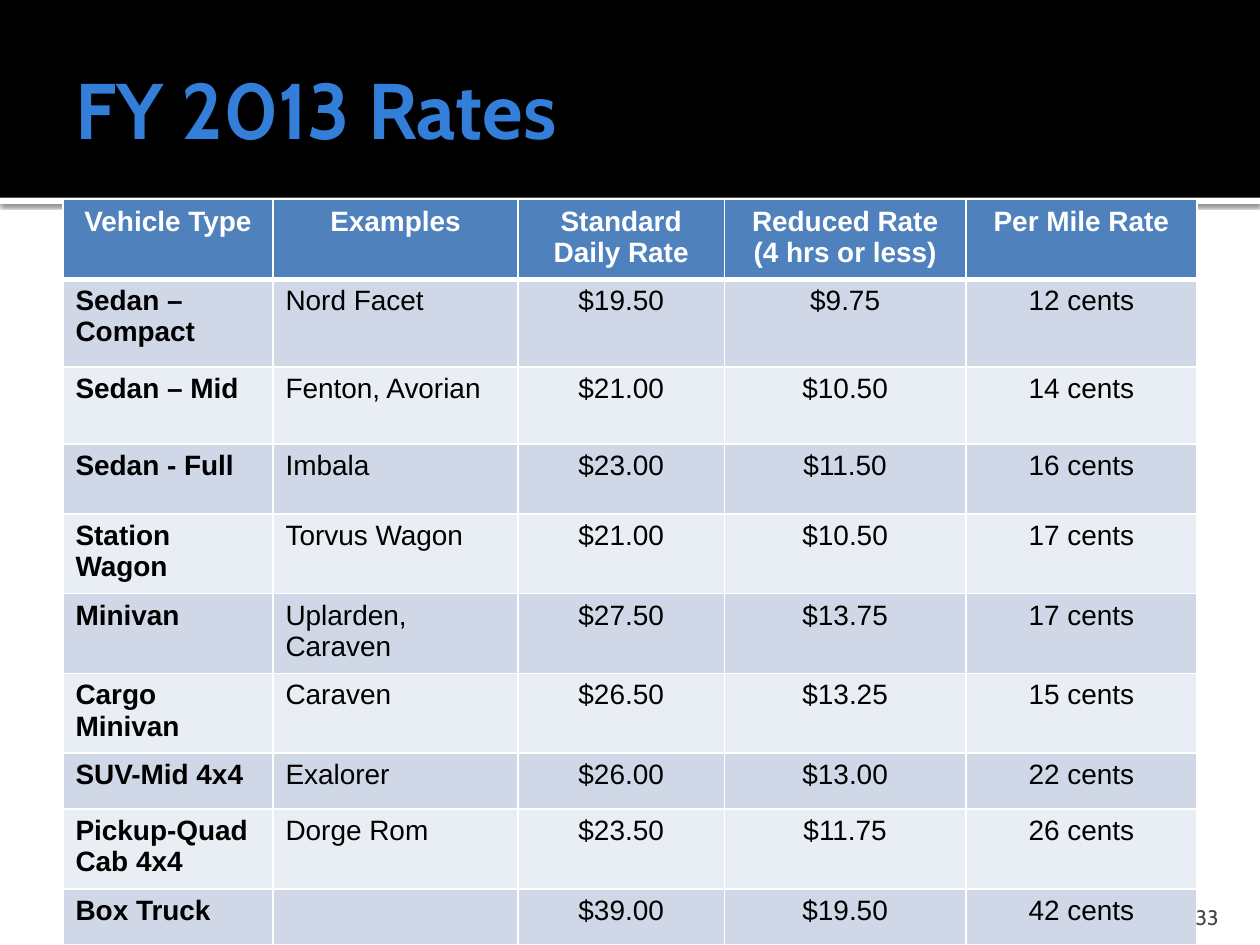
from lxml.etree import SubElement
from pptx import Presentation
from pptx.dml.color import RGBColor
from pptx.enum.shapes import MSO_SHAPE
from pptx.enum.text import MSO_ANCHOR, PP_ALIGN
from pptx.oxml.ns import qn
from pptx.util import Pt

COLUMN_WIDTHS = [120, 140, 118, 138, 132]
ROW_HEIGHTS = [45, 50, 44, 40, 42, 42, 40, 32, 45, 32]
RATES = [
    ["Vehicle Type", "Examples", "Standard\nDaily Rate",
     "Reduced Rate\n(4 hrs or less)", "Per Mile Rate"],
    ["Sedan – Compact", "Nord Facet", "$19.50", "$9.75", "12 cents"],
    ["Sedan – Mid", "Fenton, Avorian", "$21.00", "$10.50", "14 cents"],
    ["Sedan - Full", "Imbala", "$23.00", "$11.50", "16 cents"],
    ["Station Wagon", "Torvus Wagon", "$21.00", "$10.50", "17 cents"],
    ["Minivan", "Uplarden, Caraven", "$27.50", "$13.75", "17 cents"],
    ["Cargo Minivan", "Caraven", "$26.50", "$13.25", "15 cents"],
    ["SUV-Mid 4x4", "Exalorer", "$26.00", "$13.00", "22 cents"],
    ["Pickup-Quad Cab 4x4", "Dorge Rom", "$23.50", "$11.75", "26 cents"],
    ["Box Truck", "", "$39.00", "$19.50", "42 cents"],
]


def color(value):
    return RGBColor.from_string(value)


class RateSlide:
    heading_font = "Cabin"
    table_font = "Arial"
    header_fill = "4F81BD"
    row_fills = ["E9EDF4", "D0D8E8"]
    rule = "FFFFFF"

    def __init__(self, slide):
        self.slide = slide

    def band(self, top, height, fill):
        band = self.slide.shapes.add_shape(
            MSO_SHAPE.RECTANGLE, 0, Pt(top), Pt(720), Pt(height))
        band.shadow.inherit = False
        band.fill.solid()
        band.fill.fore_color.rgb = color(fill)
        band.line.fill.background()
        return band

    def cast_shadow(self, band):
        effects = band._element.spPr.find(qn("a:effectLst"))
        shadow = SubElement(
            effects, qn("a:outerShdw"), blurRad=str(Pt(2.5)),
            dist=str(Pt(0.8)), dir="5400000", rotWithShape="0")
        shade = SubElement(shadow, qn("a:srgbClr"), val="000000")
        SubElement(shade, qn("a:alpha"), val="60000")

    def style_runs(self, frame, font, size, ink, bold, align):
        for paragraph in frame.paragraphs:
            paragraph.alignment = align
            for run in paragraph.runs:
                run.font.name = font
                run.font.size = Pt(size)
                run.font.bold = bold
                run.font.color.rgb = color(ink)

    def text(self, words, box, size, ink, anchor, margins,
             bold=False, align=PP_ALIGN.LEFT):
        frame = self.slide.shapes.add_textbox(*map(Pt, box)).text_frame
        frame.word_wrap = True
        frame.vertical_anchor = anchor
        (frame.margin_left, frame.margin_top,
         frame.margin_right, frame.margin_bottom) = map(Pt, margins)
        frame.text = words
        self.style_runs(frame, self.heading_font, size, ink, bold, align)

    def border(self, cell, row):
        widths = {"L": 1, "R": 1, "T": 3 if row == 1 else 1,
                  "B": 3 if row == 0 else 1}
        properties = cell._tc.get_or_add_tcPr()
        for side, width in widths.items():
            edge = SubElement(properties, qn(f"a:ln{side}"), w=str(Pt(width)))
            fill = SubElement(edge, qn("a:solidFill"))
            SubElement(fill, qn("a:srgbClr"), val=self.rule)

    def table(self, left, top, rows, widths, heights):
        table = self.slide.shapes.add_table(
            len(rows), len(widths), Pt(left), Pt(top),
            Pt(sum(widths)), Pt(sum(heights))).table
        for column, width in zip(table.columns, widths):
            column.width = Pt(width)
        for row, height in zip(table.rows, heights):
            row.height = Pt(height)
        for r, values in enumerate(rows):
            for c, value in enumerate(values):
                self.cell(table.cell(r, c), value, r, c)

    def cell(self, cell, value, row, column):
        header = row == 0
        self.border(cell, row)
        cell.fill.solid()
        cell.fill.fore_color.rgb = color(
            self.header_fill if header else self.row_fills[row % 2])
        cell.text = value
        centered = header or column > 1
        self.style_runs(
            cell.text_frame, self.table_font, 16,
            "FFFFFF" if header else "000000", header or column == 0,
            PP_ALIGN.CENTER if centered else PP_ALIGN.LEFT)


def main():
    deck = Presentation()
    deck.slide_width, deck.slide_height = Pt(720), Pt(540)
    page = RateSlide(deck.slides.add_slide(deck.slide_layouts[6]))
    page.cast_shadow(page.band(113, 3.6, "FFFFFF"))
    page.band(0, 113, "000000")
    page.text("FY 2013 Rates", (36, 12.24, 648, 98.64), 45, "337ED9",
              MSO_ANCHOR.MIDDLE, (7.2, 3.6, 3.6, 3.6), bold=True)
    page.table(36, 114, RATES, COLUMN_WIDTHS, ROW_HEIGHTS)
    page.text("33", (645.84, 509.76, 57.6, 21.6), 12, "454545",
              MSO_ANCHOR.BOTTOM, (7.2, 3.6, 7.2, 0), align=PP_ALIGN.RIGHT)
    deck.save("out.pptx")


if __name__ == "__main__":
    main()
